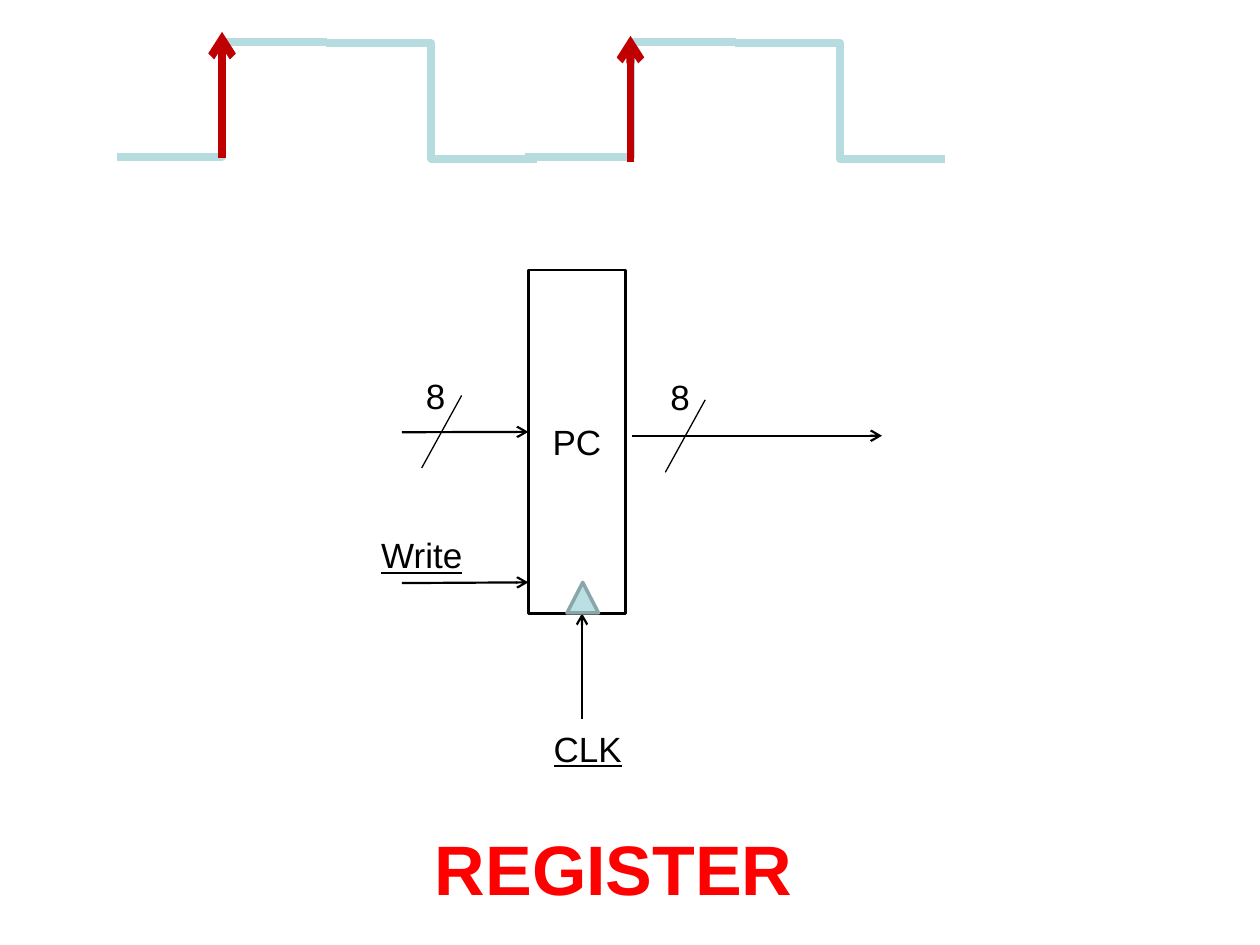
from dataclasses import dataclass

from lxml.etree import SubElement
from pptx import Presentation
from pptx.dml.color import RGBColor
from pptx.enum.shapes import MSO_CONNECTOR, MSO_SHAPE
from pptx.enum.text import MSO_ANCHOR, PP_ALIGN
from pptx.oxml.ns import qn
from pptx.util import Pt


@dataclass(frozen=True)
class Theme:
    font: str = "Arial"
    ink: str = "000000"
    title: str = "FF0000"
    edge: str = "C00000"
    wave: str = "B6DCDF"
    clock_fill: str = "BBE0E3"
    clock_line: str = "8AA6A8"
    label_size: float = 20
    title_size: float = 40
    thin: float = 0.75
    wire: float = 1.25
    outline: float = 1.5
    clock_outline: float = 2
    thick: float = 4.5


class Diagram:
    def __init__(self, page, theme):
        self.page = page
        self.theme = theme

    def label(self, frame, text, size=None, color=None, align=PP_ALIGN.CENTER,
              wrap=False, **extra):
        frame.word_wrap = wrap
        para = frame.paragraphs[0]
        para.alignment = align
        span = para.add_run()
        span.text = text
        values = {"name": self.theme.font,
                  "size": Pt(size or self.theme.label_size), **extra}
        for name, value in values.items():
            setattr(span.font, name, value)
        span.font.color.rgb = RGBColor.from_string(color or self.theme.ink)

    def text(self, place, text, **style):
        box = self.page.shapes.add_textbox(*map(Pt, place))
        self.label(box.text_frame, text, **style)

    def shape(self, kind, place, line, width, fill=None):
        box = self.page.shapes.add_shape(kind, *map(Pt, place))
        box.shadow.inherit = False
        if fill:
            box.fill.solid()
            box.fill.fore_color.rgb = RGBColor.from_string(fill)
        else:
            box.fill.background()
        box.line.color.rgb = RGBColor.from_string(line)
        box.line.width = Pt(width)
        return box

    def line(self, start, end, width, color=None, arrow=False,
             kind=MSO_CONNECTOR.STRAIGHT):
        wire = self.page.shapes.add_connector(kind, *map(Pt, (*start, *end)))
        wire.line.color.rgb = RGBColor.from_string(color or self.theme.ink)
        wire.line.width = Pt(width)
        properties = wire.element.spPr
        if arrow:
            SubElement(properties.find(qn("a:ln")), qn("a:tailEnd"), type="arrow")
        SubElement(properties, qn("a:effectLst"))


def main():
    theme = Theme()
    deck = Presentation()
    deck.slide_width, deck.slide_height = Pt(720), Pt(540)
    diagram = Diagram(deck.slides.add_slide(deck.slide_layouts[6]), theme)

    # Register body
    register = diagram.shape(MSO_SHAPE.RECTANGLE, (301.9, 154.2, 55.6, 196.4),
                             theme.ink, theme.outline)
    register.text_frame.vertical_anchor = MSO_ANCHOR.MIDDLE
    diagram.label(register.text_frame, "PC")

    # Output, input, write and clock wires
    for start, end in (((361, 249), (504, 249)),
                       ((229.7, 247), (301.9, 246.8)),
                       ((229.7, 333.2), (301.9, 332.8)),
                       ((332.6, 411), (332.6, 350.5))):
        diagram.line(start, end, theme.wire, arrow=True)

    # Bus widths: a slash and its bit count
    for left, top in ((241, 226), (380.2, 228.5)):
        diagram.line((left + 22.8, top), (left, top + 41.4), theme.thin)
    for left, top in ((196.5, 210.3), (336.1, 211)):
        diagram.text((left, top, 105, 31.5), "8", wrap=True)

    # Signal names
    for place, name in (((210.4, 301.5, 61.2, 31.5), "Write"),
                        ((308.9, 412.2, 54, 31.5), "CLK")):
        diagram.text(place, name, underline=True)

    # Clock input
    diagram.shape(MSO_SHAPE.ISOSCELES_TRIANGLE, (324, 332.8, 18, 17.5),
                  theme.clock_line, theme.clock_outline, theme.clock_fill)

    # Clock wave: each period rises, then falls
    period, step = 233.4, 120.2
    for cycle in range(2):
        left = 66.9 + cycle * period
        right = left + 2 * step - 0.6
        for start, end in (((left, 89.8), (left + step, 23.9)),
                           ((right, 90.8), (right - step, 24.6))):
            diagram.line(start, end, theme.thick, theme.wave,
                         kind=MSO_CONNECTOR.ELBOW)

    # Rising edges
    for cycle, bottom in enumerate((90.2, 92.5)):
        edge = 126.9 + cycle * period
        diagram.line((edge, bottom), (edge, bottom - 72), theme.thick,
                     theme.edge, arrow=True)

    # Title
    diagram.text((241.5, 468, 221, 55.7), "REGISTER", size=theme.title_size,
                 color=theme.title, align=PP_ALIGN.LEFT, bold=True)

    deck.save("out.pptx")


if __name__ == "__main__":
    main()
